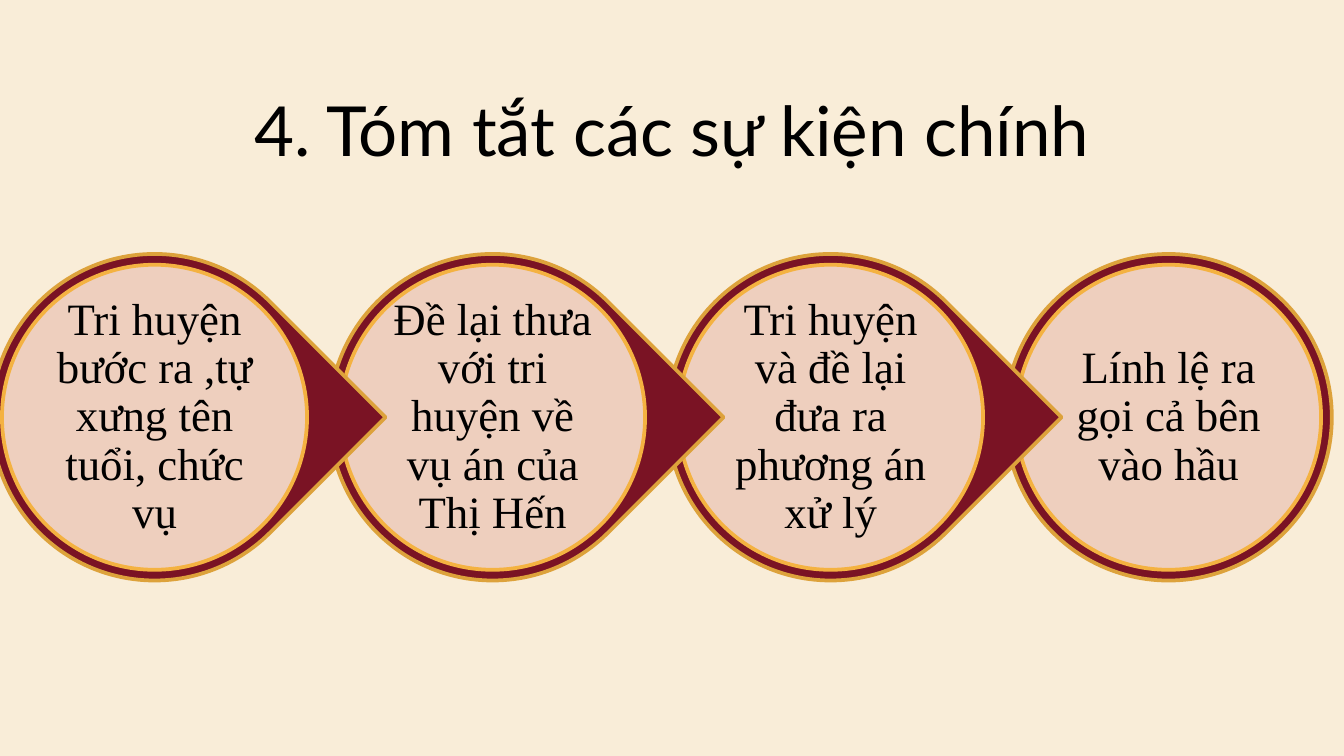
from lxml.etree import SubElement
from pptx import Presentation
from pptx.dml.color import RGBColor
from pptx.enum.shapes import MSO_SHAPE as Shape
from pptx.enum.text import MSO_ANCHOR as Anchor, PP_ALIGN as Align
from pptx.oxml.ns import qn
from pptx.util import Pt

PX = 4572  # EMU per px, 200 px to the inch
COLORS = {
    "background": "F9EDD8",
    "text": "000000",
    "disc": "7A1324",
    "disc_line": "DDA23B",
    "face": "FBE4CF",
    "face_line": "F4B241",
}
EVENTS = [
    "Tri huyện bước ra ,tự xưng tên tuổi, chức vụ",
    "Đề lại thưa với tri huyện về vụ án của Thị Hến",
    "Tri huyện và đề lại đưa ra phương án xử lý",
    "Lính lệ ra gọi cả bên vào hầu",
]
FIRST_LEFT, TOP, STEP = -13, 378, 503
DISC, FACE, LABEL = 486, 454, 324


def color(name):
    return RGBColor.from_string(COLORS[name])


def write(box, text, font, size, margin=6, spacing=None):
    frame = box.text_frame
    frame.word_wrap = True
    frame.vertical_anchor = Anchor.MIDDLE
    frame.margin_left = frame.margin_right = margin * PX
    frame.margin_top = frame.margin_bottom = margin * PX
    para = frame.paragraphs[0]
    para.alignment = Align.CENTER
    para.line_spacing = spacing
    span = para.add_run()
    span.text = text
    span.font.name = font
    span.font.size = Pt(size)
    span.font.bold = False
    span.font.color.rgb = color("text")


class EventSlide:
    def __init__(self, deck):
        self.page = deck.slides.add_slide(deck.slide_layouts[5])
        fill = self.page.background.fill
        fill.solid()
        fill.fore_color.rgb = color("background")

    def title(self, text, left, top, width, height):
        box = self.page.shapes.title
        box.left, box.top = left * PX, top * PX
        box.width, box.height = width * PX, height * PX
        write(box, text, "Lato", 37, margin=20)

    def group(self):
        return self.page.shapes.add_group_shape().shapes

    def circle(self, shapes, kind, left, top, size, style, rotation=0, opacity=None):
        shape = shapes.add_shape(kind, left * PX, top * PX, size * PX, size * PX)
        shape.shadow.inherit = False
        shape.rotation = rotation
        shape.fill.solid()
        shape.fill.fore_color.rgb = color(style)
        shape.line.color.rgb = color(style + "_line")
        shape.line.width = Pt(2)
        if opacity:
            tint = shape._element.spPr.find(qn("a:solidFill"))[0]
            SubElement(tint, qn("a:alpha"), val=str(opacity * 1000))

    def label(self, shapes, text, left, top, size):
        box = shapes.add_textbox(left * PX, top * PX, size * PX, size * PX)
        write(box, text, "Times New Roman", 24, spacing=0.9)

    def event(self, shapes, text, left, last):
        # Pointed disc, pale face and caption share one centre
        kind, rotation = (Shape.OVAL, 0) if last else (Shape.TEAR, 45)
        self.circle(shapes, kind, left, TOP, DISC, "disc", rotation)
        inset = (DISC - FACE) // 2
        self.circle(shapes, Shape.OVAL, left + inset, TOP + inset, FACE, "face", opacity=90)
        inset = (DISC - LABEL) // 2
        self.label(shapes, text, left + inset, TOP + inset, LABEL)


def main():
    deck = Presentation()
    deck.slide_width, deck.slide_height = 2000 * PX, 1125 * PX
    slide = EventSlide(deck)

    # Heading
    slide.title("4. Tóm tắt các sự kiện chính", 157, 118, 1686, 148)

    # Chain of events, drawn from the last so each point overlaps the next disc
    chain = slide.group()
    final = len(EVENTS) - 1
    for index in range(final, -1, -1):
        slide.event(chain, EVENTS[index], FIRST_LEFT + index * STEP, index == final)

    deck.save("out.pptx")


if __name__ == "__main__":
    main()
